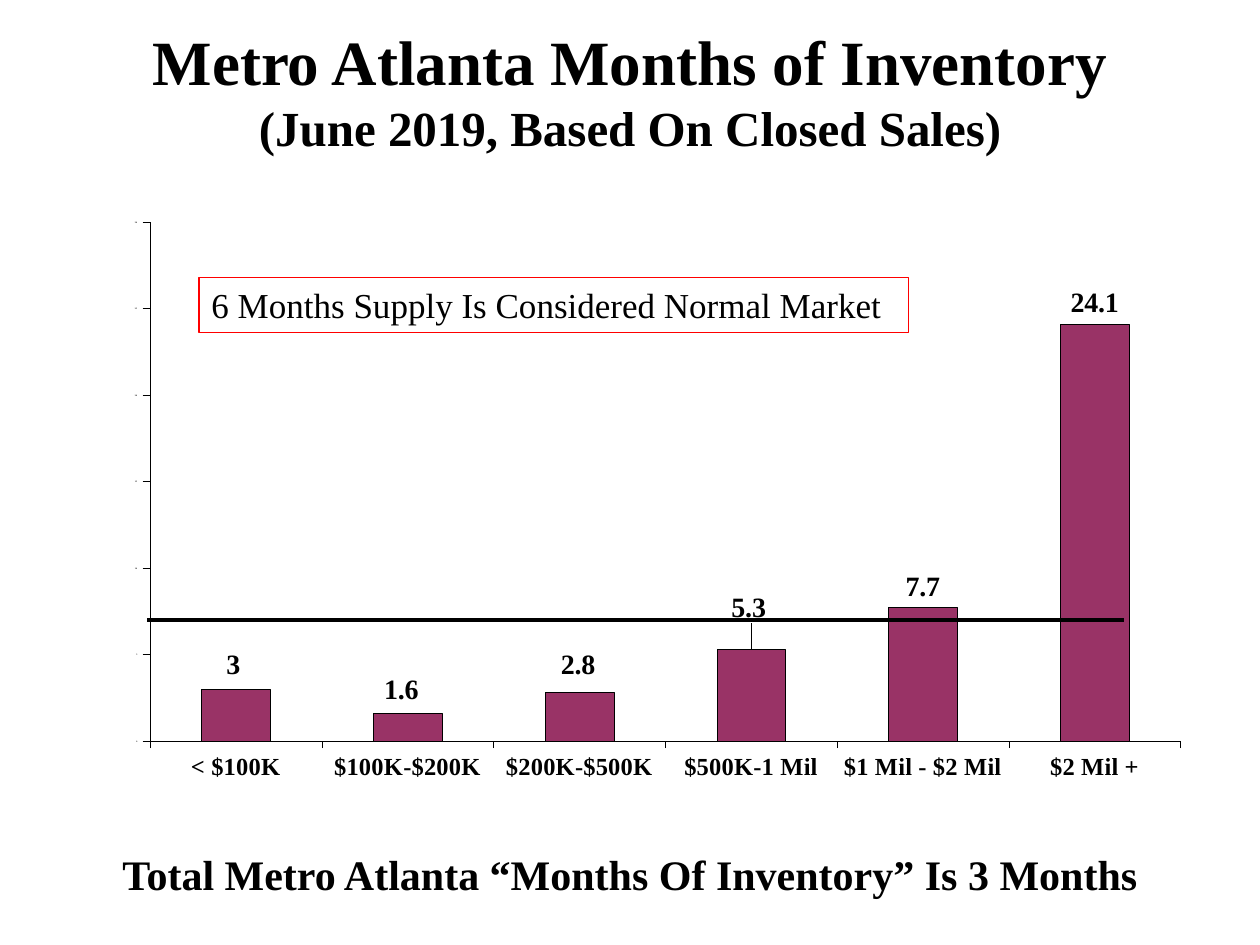
from dataclasses import dataclass
from typing import NamedTuple

from lxml.etree import SubElement
from pptx import Presentation
from pptx.chart.data import CategoryChartData
from pptx.dml.color import RGBColor
from pptx.enum.chart import XL_CHART_TYPE as ChartType
from pptx.enum.chart import XL_LABEL_POSITION as LabelPosition
from pptx.enum.chart import XL_TICK_LABEL_POSITION as TickLabels
from pptx.enum.chart import XL_TICK_MARK as TickMark
from pptx.enum.shapes import MSO_CONNECTOR as Connector
from pptx.enum.shapes import MSO_SHAPE as Shape
from pptx.enum.text import MSO_ANCHOR as Anchor
from pptx.enum.text import MSO_AUTO_SIZE as AutoSize
from pptx.enum.text import PP_ALIGN as Align
from pptx.oxml import parse_xml
from pptx.oxml.ns import nsdecls, qn
from pptx.util import Inches, Pt


@dataclass(frozen=True)
class Theme:
    font: str = "Times New Roman"
    ink: RGBColor = RGBColor(0, 0, 0)
    bar: RGBColor = RGBColor(0x99, 0x33, 0x66)
    note_border: RGBColor = RGBColor(0xFF, 0, 0)
    title: float = 36
    subtitle: float = 28
    summary: float = 24
    note: float = 20
    value: float = 16
    category: float = 14
    tiny: float = 1.2


class Frame(NamedTuple):
    left: float
    top: float
    width: float
    height: float

    def lengths(self) -> list:
        return [Inches(value) for value in self]


class Band(NamedTuple):
    name: str
    months: float
    label_shift: tuple | None = None  # inches right and down


THEME = Theme()
CHART = Frame(0.49, 1.22, 9.03, 5.66)
PLOT = Frame(1.19, 1.76, 8.18, 4.12)
BANDS = [
    Band("< $100K", 3, (-0.02, -0.02)),
    Band("$100K-$200K", 1.6, (-0.05, -0.02)),
    Band("$200K-$500K", 2.8, (-0.01, -0.05)),
    Band("$500K-1 Mil", 5.3, (-0.02, -0.16)),
    Band("$1 Mil - $2 Mil", 7.7),
    Band("$2 Mil +", 24.1),
]


def set_font(font, size: float, bold: bool = True) -> None:
    font.name, font.size, font.bold = THEME.font, Pt(size), bold
    font.color.rgb = THEME.ink


def add_text(para, text: str, *, size: float, bold: bool = True, align=Align.CENTER) -> None:
    para.alignment = align
    span = para.add_run()
    span.text = text
    set_font(span.font, size, bold)


def set_line(line, color: RGBColor, width: float) -> None:
    line.color.rgb = color
    line.width = Pt(width)


def make_layout(**values):
    """Build a chart layout element from named settings."""
    layout = parse_xml(f"<c:layout {nsdecls('c')}><c:manualLayout/></c:layout>")
    for name, value in values.items():
        SubElement(layout[0], qn(f"c:{name}")).set("val", str(value))
    return layout


def format_axis(axis, size: float) -> None:
    axis.has_major_gridlines = False
    axis.major_tick_mark = TickMark.OUTSIDE
    axis.minor_tick_mark = TickMark.NONE
    set_font(axis.tick_labels.font, size)
    set_line(axis.format.line, THEME.ink, 0.02)


def add_inventory_chart(page) -> None:
    data = CategoryChartData()
    data.categories = [band.name for band in BANDS]
    data.add_series("Series 1", [band.months for band in BANDS])
    chart = page.shapes.add_chart(ChartType.COLUMN_CLUSTERED, *CHART.lengths(), data).chart
    chart.has_legend = False
    chart.has_title = False
    set_font(chart.font, THEME.tiny)

    # Axes
    format_axis(chart.category_axis, THEME.category)
    chart.category_axis.tick_label_position = TickLabels.LOW
    format_axis(chart.value_axis, THEME.tiny)
    chart.value_axis.minimum_scale = 0
    chart.value_axis.maximum_scale = 30
    chart.value_axis.major_unit = 5

    # Plot area inside the chart frame
    area = chart.plots[0]._element.getparent()
    for old in area.findall(qn("c:layout")):
        area.remove(old)
    area.insert(0, make_layout(
        layoutTarget="inner", xMode="edge", yMode="edge",
        x=(PLOT.left - CHART.left) / CHART.width,
        y=(PLOT.top - CHART.top) / CHART.height,
        w=PLOT.width / CHART.width, h=PLOT.height / CHART.height))

    # Bars and their values
    plot = chart.plots[0]
    plot.gap_width = 150
    plot.vary_by_categories = False
    series = plot.series[0]
    series.format.fill.solid()
    series.format.fill.fore_color.rgb = THEME.bar
    set_line(series.format.line, THEME.ink, 0.06)
    labels = series.data_labels
    labels.show_value = True
    labels.position = LabelPosition.OUTSIDE_END
    set_font(labels.font, THEME.value)
    for index, band in enumerate(BANDS):
        if band.label_shift:
            label = series.points[index].data_label
            set_font(label.font, THEME.value)
            label.position = LabelPosition.OUTSIDE_END
            right, down = band.label_shift
            element = series._element.xpath(f"c:dLbls/c:dLbl[c:idx/@val='{index}']")[0]
            element.insert(1, make_layout(x=right / CHART.width, y=down / CHART.height))


def add_normal_market_line(page) -> None:
    ends = [Inches(value) for value in (1.17, 4.92, 8.92, 4.92)]
    line = page.shapes.add_connector(Connector.STRAIGHT, *ends)
    set_line(line.line, THEME.ink, 2.25)
    SubElement(line._element.spPr, qn("a:effectLst"))


def write_title(page) -> None:
    box = page.shapes.title
    box.left, box.top, box.width, box.height = Frame(0, 0.5, 10, 0.42).lengths()
    frame = box.text_frame
    frame.auto_size = AutoSize.NONE
    frame.vertical_anchor = Anchor.MIDDLE
    para = frame.paragraphs[0]
    add_text(para, "Metro Atlanta Months of Inventory", size=THEME.title)
    para.add_line_break()
    add_text(para, "(June 2019, Based On Closed Sales)", size=THEME.subtitle)


def add_summary(page) -> None:
    frame = page.shapes.add_textbox(*Frame(0, 6.58, 10, 0.58).lengths()).text_frame
    frame.word_wrap = True
    frame.margin_top = Inches(0.2)
    para = frame.paragraphs[0]
    para.line_spacing = 0.9
    add_text(para, "Total Metro Atlanta “Months Of Inventory” Is 3 Months", size=THEME.summary)


def add_note(page) -> None:
    box = page.shapes.add_shape(Shape.RECTANGLE, *Frame(1.58, 2.2, 5.63, 0.44).lengths())
    box.shadow.inherit = False
    box.fill.background()
    set_line(box.line, THEME.note_border, 0.75)
    frame = box.text_frame
    frame.word_wrap = True
    frame.auto_size = AutoSize.SHAPE_TO_FIT_TEXT
    frame.vertical_anchor = Anchor.TOP
    add_text(frame.paragraphs[0], "6 Months Supply Is Considered Normal Market",
             size=THEME.note, bold=False, align=Align.LEFT)


def main() -> None:
    deck = Presentation()
    deck.slide_width, deck.slide_height = Inches(10), Inches(7.5)
    page = deck.slides.add_slide(deck.slide_layouts.get_by_name("Title Only"))
    write_title(page)
    add_inventory_chart(page)
    add_normal_market_line(page)
    add_summary(page)
    add_note(page)
    deck.save("out.pptx")


if __name__ == "__main__":
    main()
